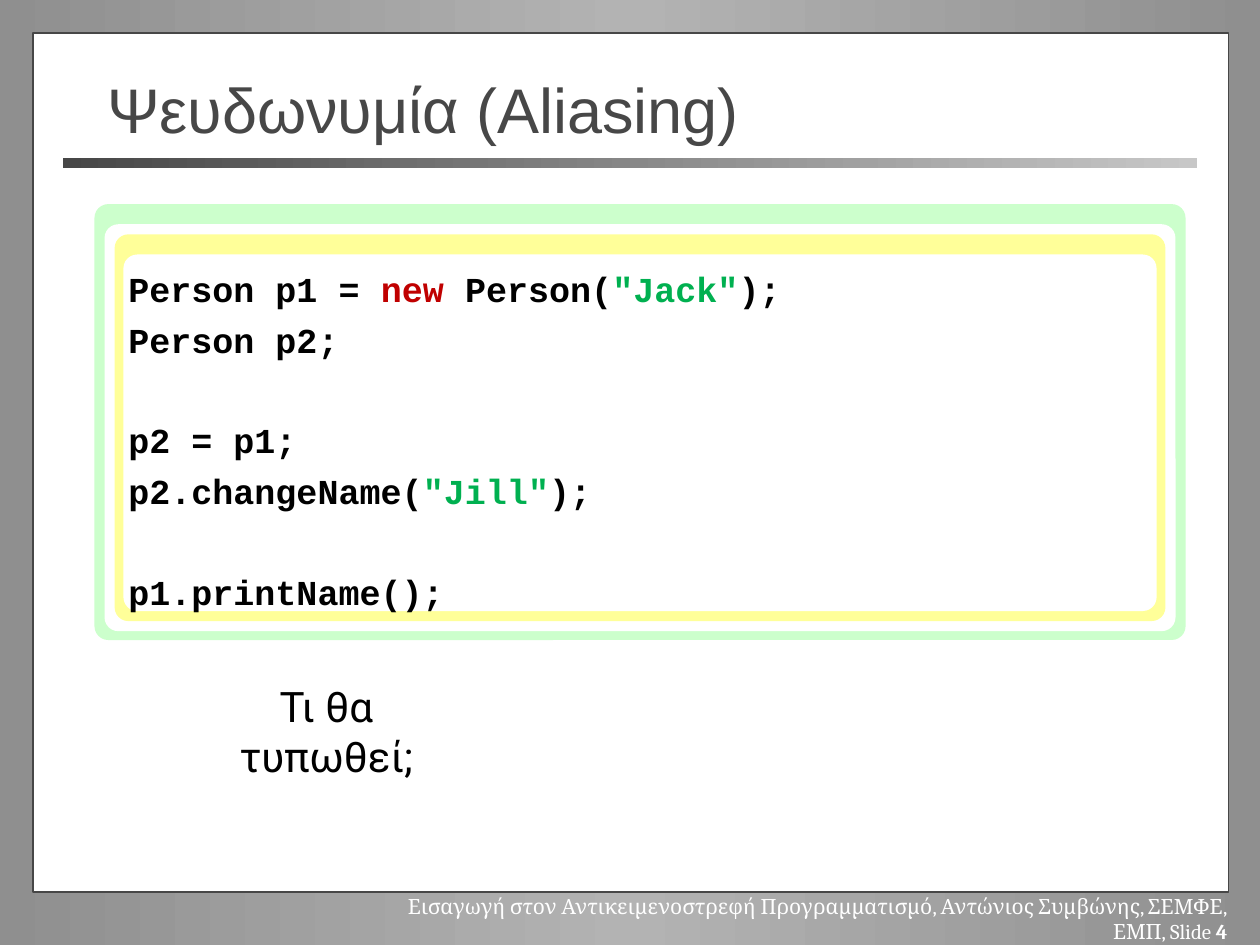
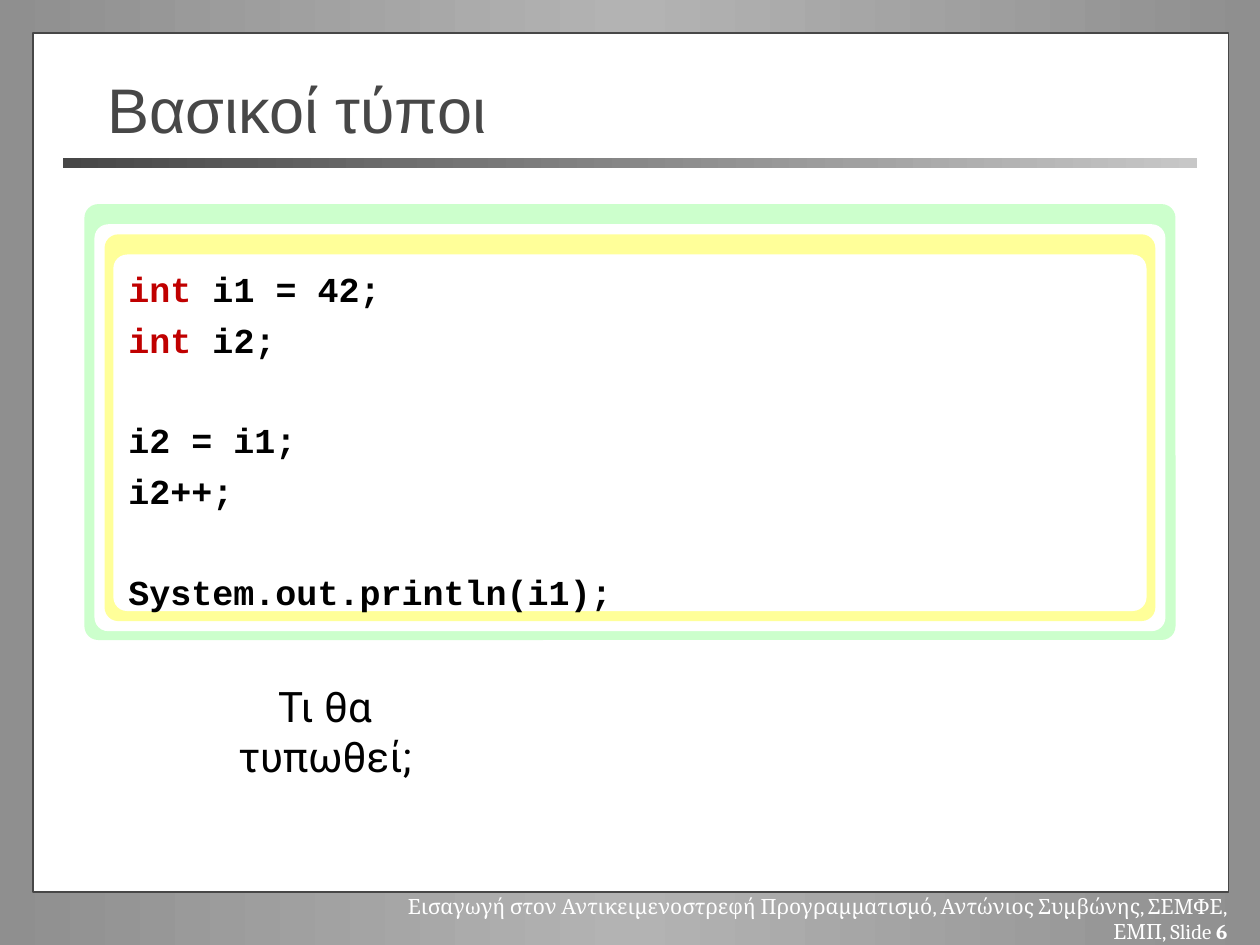
from copy import deepcopy
from dataclasses import dataclass

from pptx import Presentation
from pptx.dml.color import RGBColor
from pptx.enum.shapes import MSO_SHAPE
from pptx.enum.text import MSO_ANCHOR, MSO_AUTO_SIZE, PP_ALIGN
from pptx.oxml.ns import qn
from pptx.util import Inches, Pt

RECTANGLE, ROUNDED = MSO_SHAPE.RECTANGLE, MSO_SHAPE.ROUNDED_RECTANGLE
LEFT, CENTER, RIGHT = PP_ALIGN.LEFT, PP_ALIGN.CENTER, PP_ALIGN.RIGHT
MIDDLE = MSO_ANCHOR.MIDDLE
NO_AUTOFIT = MSO_AUTO_SIZE.NONE
TITLE_ONLY = 5


@dataclass(frozen=True)
class Theme:
    edge: str = "8F8F8F"
    glow: str = "B3B3B3"
    dark: str = "474747"
    light: str = "C7C7C7"
    white: str = "FFFFFF"
    black: str = "000000"
    green: str = "CCFFCC"
    yellow: str = "FFFF99"
    keyword: str = "C00000"
    literal: str = "00B050"
    title: tuple = ("Arial", 36)
    code: tuple = ("Courier New", 20)
    question: tuple = ("Roboto", 24)
    footer: tuple = ("Cambria", 12)


THEME = Theme()
FOOTER = "Εισαγωγή στον Αντικειμενοστρεφή Προγραμματισμό, Αντώνιος Συμβώνης, ΣΕΜΦΕ, ΕΜΠ, Slide "
QUESTION = "Τι θα τυπωθεί;"
TOKEN_COLORS = {"new": THEME.keyword, "int": THEME.keyword,
                '"Jack"': THEME.literal, '"Jill"': THEME.literal}

SLIDES = [
    {"title": "Ψευδωνυμία (Aliasing)", "number": "4", "panel_left": 0.75,
     "question_left": 1.42,
     "code": [
         [["Person p1 = ", "new", " Person(", '"Jack"', ");"], ["Person p2;"]],
         [["p2 = p1;"], ["p2.changeName(", '"Jill"', ");"]],
         [["p1.printName();"]],
     ]},
    {"title": "Βασικοί τύποι", "number": "6", "panel_left": 0.67,
     "question_left": 1.41,
     "code": [
         [["int", " i1 = 42;"], ["int", " i2;"]],
         [["i2 = i1;"], ["i2++;"]],
         [["System.out.println(i1);"]],
     ]},
]

PANEL_WIDTH = 8.66
PANEL_LAYERS = [
    (0, 1.62, 3.46, THEME.green),
    (0.08, 1.78, 3.23, THEME.white),
    (0.16, 1.86, 3.07, THEME.yellow),
    (0.23, 2.02, 2.83, THEME.white),
]
CORNER_RADIUS = 0.11
LINE_GAP, BLOCK_GAP = 5.3, 33.3


def rgb(value):
    return RGBColor.from_string(value)


def inches(*lengths):
    return [Inches(length) for length in lengths]


def add_block(slide, kind, place, color):
    block = slide.shapes.add_shape(kind, *inches(*place))
    block.shadow.inherit = False
    block.fill.solid()
    block.fill.fore_color.rgb = rgb(color)
    block.line.fill.background()
    return block


def set_gradient(fill, start, end):
    fill.gradient()
    fill.gradient_angle = 0
    for stop, color, position in zip(fill.gradient_stops, (start, end), (0, 1)):
        stop.color.rgb = rgb(color)
        stop.position = position


def style(paragraph, face, color, align=LEFT, bold=False):
    paragraph.alignment = align
    paragraph.font.name, size = face
    paragraph.font.size = Pt(size)
    paragraph.font.bold = bold
    paragraph.font.color.rgb = rgb(color)


def add_text(slide, place):
    box = slide.shapes.add_textbox(*inches(*place))
    box.text_frame.word_wrap = True
    return box.text_frame


def add_background(slide):
    fill = slide.background.fill
    set_gradient(fill, THEME.edge, THEME.glow)
    stops = slide.element.find(".//" + qn("a:gsLst"))
    stops.append(deepcopy(stops[0]))
    fill.gradient_stops[1].position = 0.5
    fill.gradient_stops[2].position = 1


def add_frame(slide, number):
    add_background(slide)
    sheet = add_block(slide, RECTANGLE, (0.26, 0.26, 9.49, 6.82), THEME.white)
    sheet.line.color.rgb = rgb(THEME.dark)
    sheet.line.width = Pt(1)
    rule = add_block(slide, RECTANGLE, (0.5, 1.25, 9, 0.08), THEME.dark)
    set_gradient(rule.fill, THEME.dark, THEME.light)
    paragraph = add_text(slide, (2.84, 7.04, 7, 0.3)).paragraphs[0]
    paragraph.add_run().text = FOOTER
    span = paragraph.add_run()
    span.text = number
    span.font.bold = True
    style(paragraph, THEME.footer, THEME.white, RIGHT)


def add_title(slide, text):
    title = slide.shapes.title
    title.left, title.top, title.width, title.height = inches(0.75, 0.55, 8.5, 0.62)
    title.text_frame.text = text
    title.text_frame.vertical_anchor = MIDDLE
    title.text_frame.auto_size = NO_AUTOFIT
    style(title.text_frame.paragraphs[0], THEME.title, THEME.dark)
    slide.shapes.element.append(title.element)


def add_panel(slide, left):
    for inset, top, height, color in PANEL_LAYERS:
        place = (left + inset, top, PANEL_WIDTH - 2 * inset, height)
        layer = add_block(slide, ROUNDED, place, color)
        layer.adjustments[0] = CORNER_RADIUS / height


def add_code(slide, blocks):
    frame = add_text(slide, (0.92, 2.07, 8.42, 2.77))
    paragraph = None
    for block in blocks:
        for index, line in enumerate(block):
            if paragraph is None:
                paragraph = frame.paragraphs[0]
            else:
                paragraph = frame.add_paragraph()
                paragraph.space_before = Pt(LINE_GAP if index else BLOCK_GAP)
            for token in line:
                span = paragraph.add_run()
                span.text = token
                if token in TOKEN_COLORS:
                    span.font.color.rgb = rgb(TOKEN_COLORS[token])
            style(paragraph, THEME.code, THEME.black, bold=True)


def add_question(slide, left):
    paragraph = add_text(slide, (left, 5.35, 2.34, 0.5)).paragraphs[0]
    paragraph.text = QUESTION
    style(paragraph, THEME.question, THEME.black, CENTER)


def main():
    deck = Presentation()
    deck.slide_width, deck.slide_height = inches(10, 7.5)
    for page in SLIDES:
        slide = deck.slides.add_slide(deck.slide_layouts[TITLE_ONLY])
        add_frame(slide, page["number"])
        add_panel(slide, page["panel_left"])
        add_title(slide, page["title"])
        add_code(slide, page["code"])
        add_question(slide, page["question_left"])
    deck.save("out.pptx")


if __name__ == "__main__":
    main()
